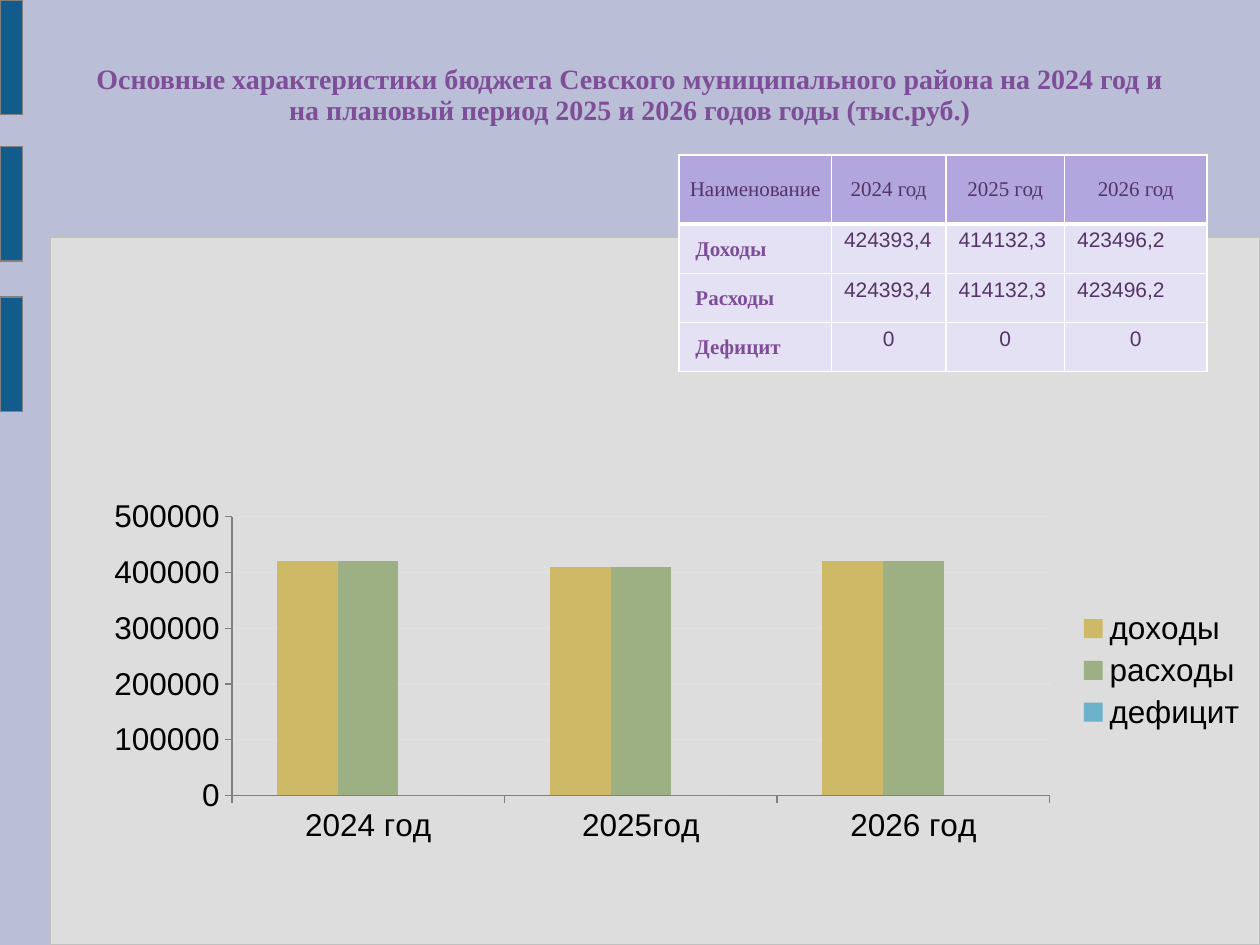
from lxml import etree
from pptx import Presentation
from pptx.chart.data import CategoryChartData
from pptx.dml.color import RGBColor
from pptx.enum import chart as ch, shapes, text
from pptx.oxml import parse_xml
from pptx.oxml.ns import nsdecls, qn
from pptx.util import Cm, Pt

BACKGROUND = RGBColor(0xBA, 0xBE, 0xD6)
PANEL = RGBColor(0xDD, 0xDD, 0xDD)
PANEL_LINE = RGBColor(0xC0, 0xC0, 0xC0)
TAB = RGBColor(0x12, 0x5C, 0x8D)
GRAY = RGBColor(0x80, 0x80, 0x80)
PURPLE = RGBColor(0x7E, 0x4E, 0x99)
DARK_PURPLE = RGBColor(0x54, 0x34, 0x66)
HEADER_FILL = RGBColor(0xB2, 0xA6, 0xDF)
BODY_FILL = RGBColor(0xE5, 0xE1, 0xF4)
WHITE = RGBColor(0xFF, 0xFF, 0xFF)
BLACK = RGBColor(0, 0, 0)
GRID = RGBColor(0xE1, 0xE0, 0xE2)
SERIF, SANS = "Times New Roman", "Arial"

TABLE_ROWS = [
    ("Наименование", "2024 год", "2025 год", "2026 год"),
    ("Доходы", "424393,4", "414132,3", "423496,2"),
    ("Расходы", "424393,4", "414132,3", "423496,2"),
    ("Дефицит", "0", "0", "0"),
]
CATEGORIES = ("2024 год", "2025год", "2026 год")
SERIES = [
    ("доходы", (420000, 410000, 420000), RGBColor(0xCE, 0xB9, 0x66)),
    ("расходы", (420000, 410000, 420000), RGBColor(0x9C, 0xB0, 0x84)),
    ("дефицит", (0, 0, 0), RGBColor(0x6B, 0xB1, 0xC9)),
]


def write(frame, content, size=12, font=SERIF, color=DARK_PURPLE, bold=False,
          align=text.PP_ALIGN.LEFT):
    paragraph = frame.paragraphs[0]
    paragraph.alignment = align
    paragraph.line_spacing = 0.93
    run = paragraph.add_run()
    run.text = content
    run.font.size = Pt(size)
    run.font.name = font
    run.font.bold = bold
    run.font.color.rgb = color


def add_panel(slide, left, top, width, height, fill, line):
    shape = slide.shapes.add_shape(shapes.MSO_SHAPE.ROUNDED_RECTANGLE,
                                   Cm(left), Cm(top), Cm(width), Cm(height))
    shape.adjustments[0] = 0
    shape.shadow.inherit = False
    shape.fill.solid()
    shape.fill.fore_color.rgb = fill
    shape.line.color.rgb = line
    shape.line.width = Pt(0.75)


def set_title(slide, content):
    title = slide.shapes.title
    title.left, title.top, title.width, title.height = Cm(1.85), Cm(0.74), Cm(21.69), Cm(2.39)
    frame = title.text_frame
    frame.auto_size = text.MSO_AUTO_SIZE.NONE
    frame.vertical_anchor = text.MSO_ANCHOR.MIDDLE
    frame.margin_left = frame.margin_right = frame.margin_top = frame.margin_bottom = 0
    write(frame, content, size=16, color=PURPLE, bold=True, align=text.PP_ALIGN.CENTER)


def set_borders(cell, top, bottom):
    """White borders; top and bottom widths are in points, the sides are 1 pt."""
    properties = cell._tc.get_or_add_tcPr()
    widths = (("lnL", 1), ("lnR", 1), ("lnT", top), ("lnB", bottom))
    for position, (tag, width) in enumerate(widths):
        properties.insert(position, parse_xml(
            f'<a:{tag} {nsdecls("a")} w="{Pt(width)}"><a:solidFill>'
            f'<a:srgbClr val="{WHITE}"/></a:solidFill></a:{tag}>'))


def fill_cell(cell, content, row, column):
    is_header, is_label = row == 0, column == 0
    cell.fill.solid()
    cell.fill.fore_color.rgb = HEADER_FILL if is_header else BODY_FILL
    set_borders(cell, top=3 if row == 1 else 1, bottom=3 if is_header else 1)
    if is_header or is_label:
        cell.vertical_anchor = text.MSO_ANCHOR.MIDDLE
        cell.margin_left = Cm(0.03 if is_header else 0.33)
        cell.margin_right = cell.margin_top = Cm(0.03)
        cell.margin_bottom = 0
    centred = is_header or content == "0"
    align = text.PP_ALIGN.CENTER if centred else text.PP_ALIGN.LEFT
    if is_label and not is_header:
        write(cell.text_frame, content, color=PURPLE, bold=True)
    else:
        write(cell.text_frame, content, font=SERIF if is_header else SANS, align=align)


def add_budget_table(slide):
    widths, heights = (3.07, 2.31, 2.39, 2.87), (1.4, 0.99, 0.99, 0.99)
    table = slide.shapes.add_table(len(heights), len(widths), Cm(13.69), Cm(3.12),
                                   Cm(sum(widths)), Cm(sum(heights))).table
    for column, width in zip(table.columns, widths):
        column.width = Cm(width)
    for row, height in zip(table.rows, heights):
        row.height = Cm(height)
    for row, contents in enumerate(TABLE_ROWS):
        for column, content in enumerate(contents):
            fill_cell(table.cell(row, column), content, row, column)


def place_plot(chart, **fractions):
    """Fix the inner plot area; x, y, w and h are fractions of the chart."""
    plot_area = chart._chartSpace.chart.plotArea
    for old in plot_area.findall(qn("c:layout")):
        plot_area.remove(old)
    layout = parse_xml(f'<c:layout {nsdecls("c")}><c:manualLayout/></c:layout>')
    settings = {"layoutTarget": "inner", "xMode": "edge", "yMode": "edge", **fractions}
    for tag, value in settings.items():
        etree.SubElement(layout[0], qn(f"c:{tag}")).set("val", str(value))
    plot_area.insert(0, layout)


def add_budget_chart(slide):
    data = CategoryChartData()
    data.categories = CATEGORIES
    for name, values, _ in SERIES:
        data.add_series(name, values)
    chart = slide.shapes.add_chart(ch.XL_CHART_TYPE.COLUMN_CLUSTERED, Cm(1.85), Cm(9.91),
                                   Cm(23.55), Cm(7.21), data).chart
    chart.has_title = False
    chart.font.size = Pt(18)
    chart.font.name = SANS
    chart.font.color.rgb = BLACK
    chart.has_legend = True
    chart.legend.position = ch.XL_LEGEND_POSITION.RIGHT
    chart.legend.include_in_layout = False
    plot = chart.plots[0]
    plot.gap_width = 150
    plot.overlap = 0
    plot.vary_by_categories = False
    for series, (_, _, color) in zip(plot.series, SERIES):
        series.format.fill.solid()
        series.format.fill.fore_color.rgb = color
    for axis in (chart.category_axis, chart.value_axis):
        axis.major_tick_mark = ch.XL_TICK_MARK.OUTSIDE
        axis.format.line.color.rgb = GRAY
        axis.format.line.width = Pt(0.75)
    value_axis = chart.value_axis
    value_axis.minimum_scale, value_axis.maximum_scale = 0, 500000
    value_axis.major_unit = 100000
    value_axis.major_gridlines.format.line.color.rgb = GRID
    value_axis.major_gridlines.format.line.width = Pt(0.75)
    place_plot(chart, x=0.12, y=0.07, w=0.7, h=0.78)


def main():
    presentation = Presentation()
    presentation.slide_width, presentation.slide_height = Cm(25.4), Cm(19.05)
    slide = presentation.slides.add_slide(presentation.slide_layouts[5])
    slide.background.fill.solid()
    slide.background.fill.fore_color.rgb = BACKGROUND
    add_panel(slide, 1.02, 4.78, 24.38, 14.27, PANEL, PANEL_LINE)
    for top in (0, 2.95, 5.99):
        add_panel(slide, 0, top, 0.46, 2.31, TAB, GRAY)
    set_title(slide, "Основные характеристики бюджета Севского муниципального района "
                     "на 2024 год и на плановый период 2025 и 2026 годов годы (тыс.руб.)")
    add_budget_table(slide)
    add_budget_chart(slide)
    presentation.save("out.pptx")


if __name__ == "__main__":
    main()
